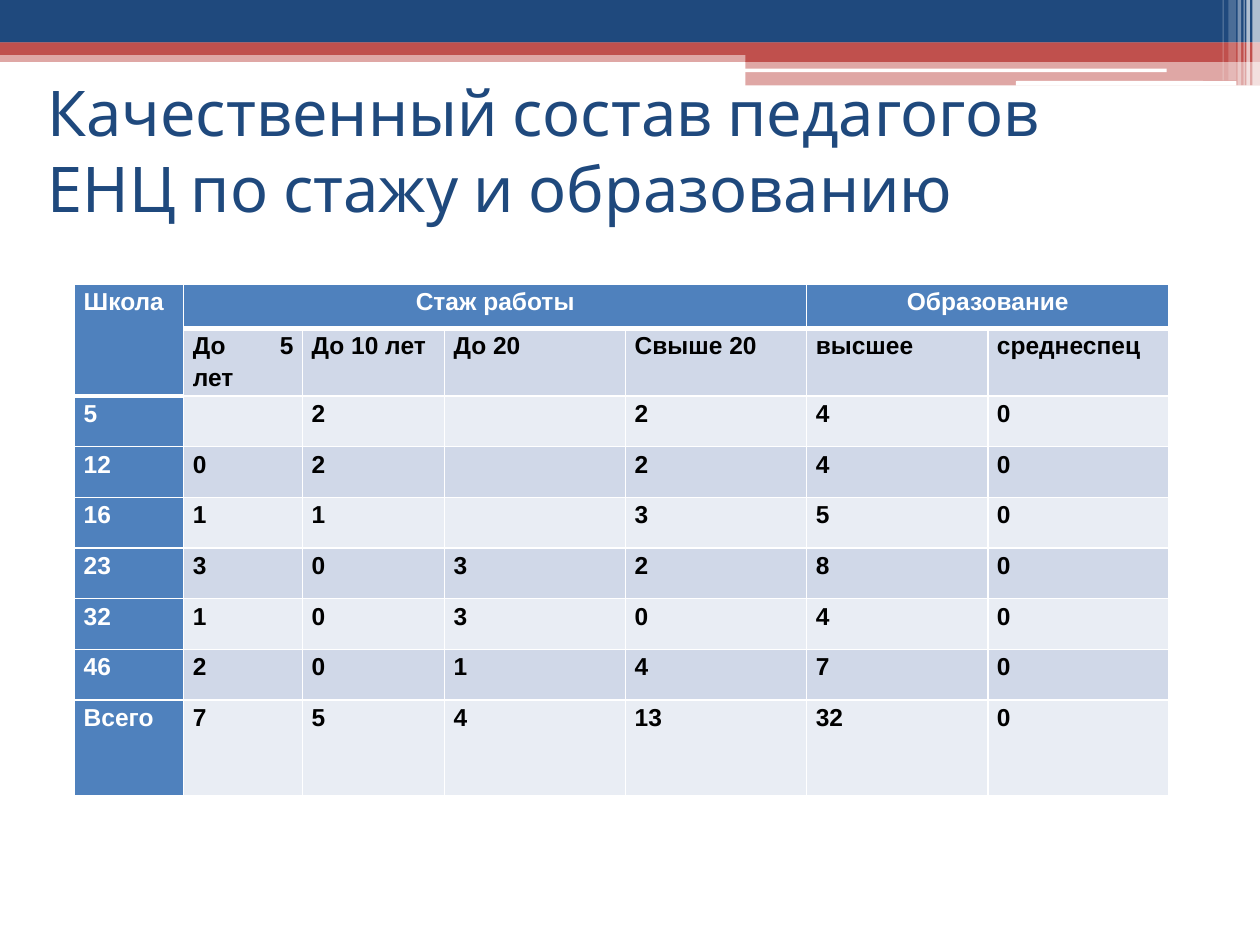
"""Builds the slide on teaching staff by experience and education."""
from dataclasses import dataclass

from lxml import etree
from pptx import Presentation
from pptx.dml.color import RGBColor
from pptx.enum.shapes import MSO_SHAPE
from pptx.enum.text import MSO_ANCHOR, PP_ALIGN
from pptx.oxml.ns import qn
from pptx.util import Pt

RECT, ROUND = MSO_SHAPE.RECTANGLE, MSO_SHAPE.ROUNDED_RECTANGLE
LEFT, CENTER, JUSTIFY = PP_ALIGN.LEFT, PP_ALIGN.CENTER, PP_ALIGN.JUSTIFY
MIDDLE = MSO_ANCHOR.MIDDLE


@dataclass(frozen=True)
class Theme:
    navy: str = "1F497D"
    red: str = "C0504D"
    white: str = "FFFFFF"
    black: str = "000000"
    head: str = "4F81BD"
    bands: tuple = ("E9EDF4", "D0D8E8")
    title_font: str = "Karla"
    body_font: str = "Arial"
    title_size: int = 36
    body_size: int = 14
    thin: int = 1
    thick: int = 3


def write(tf, text, *, font, size, color, bold=False, align=LEFT, spacing=1.0):
    p = tf.paragraphs[0]
    p.alignment, p.line_spacing = align, spacing
    r = p.add_run()
    r.text = text
    r.font.name, r.font.size, r.font.bold = font, Pt(size), bold
    r.font.color.rgb = RGBColor.from_string(color)


class Deck:
    def __init__(self, theme, width, height):
        self.theme = theme
        self.prs = Presentation()
        self.prs.slide_width, self.prs.slide_height = Pt(width), Pt(height)
        self.s = self.prs.slides.add_slide(self.prs.slide_layouts[6])

    def bar(self, x, y, w, h, color, alpha=100, kind=RECT):
        sp = self.s.shapes.add_shape(kind, Pt(x), Pt(y), Pt(w), Pt(h))
        sp.shadow.inherit = False
        sp.line.fill.background()
        sp.fill.solid()
        sp.fill.fore_color.rgb = RGBColor.from_string(color)
        if alpha < 100:
            clr = sp.fill._xPr.find(qn("a:solidFill"))[0]
            etree.SubElement(clr, qn("a:alpha"), val=str(alpha * 1000))

    def title(self, x, y, w, h, text):
        t = self.theme
        tf = self.s.shapes.add_textbox(Pt(x), Pt(y), Pt(w), Pt(h)).text_frame
        tf.word_wrap, tf.vertical_anchor = True, MIDDLE
        write(tf, text, font=t.title_font, size=t.title_size, color=t.navy)

    def cell(self, cell, text, fill, color, align, borders):
        t = self.theme
        cell.margin_left = cell.margin_right = Pt(5.2)
        cell.margin_top = cell.margin_bottom = 0
        if text:
            write(cell.text_frame, text, font=t.body_font, size=t.body_size,
                  color=color, bold=True, align=align, spacing=1.15)
        tc_pr = cell._tc.get_or_add_tcPr()
        for side, width in borders.items():
            ln = etree.SubElement(tc_pr, qn("a:ln" + side), w=str(Pt(width)))
            solid = etree.SubElement(ln, qn("a:solidFill"))
            etree.SubElement(solid, qn("a:srgbClr"), val=t.white)
        cell.fill.solid()
        cell.fill.fore_color.rgb = RGBColor.from_string(fill)

    def table(self, x, y, widths, heights, rows, merges, justified):
        t = self.theme
        frame = self.s.shapes.add_table(len(rows), len(widths), Pt(x), Pt(y),
                                        Pt(sum(widths)), Pt(sum(heights)))
        table = frame.table
        for column, width in zip(table.columns, widths):
            column.width = Pt(width)
        for row, height in zip(table.rows, heights):
            row.height = Pt(height)
        for top, left, bottom, right in merges:
            table.cell(top, left).merge(table.cell(bottom, right))
        under_head = {(0, c) for c in range(len(widths))} | {(1, 0)}
        for i, row in enumerate(rows):
            for j, text in enumerate(row):
                is_head = i == 0 or j == 0
                align = JUSTIFY if j == 0 or (i, j) in justified else LEFT
                borders = dict(L=t.thin, R=t.thin,
                               T=t.thick if (i - 1, j) in under_head else t.thin,
                               B=t.thick if (i, j) in under_head else t.thin)
                self.cell(table.cell(i, j), text,
                          t.head if is_head else t.bands[i % 2],
                          t.white if is_head else t.black,
                          CENTER if i == 0 and j else align, borders)


def main():
    t = Theme()
    deck = Deck(t, 720, 540)

    deck.bar(0, 28.8, 720, 6.6, t.red, 50)
    deck.bar(0, 0, 720, 24.4, t.navy)
    deck.bar(0, 24.2, 720, 7.2, t.red)
    deck.bar(426, 28.3, 294, 7.1, t.red)
    deck.bar(426, 35, 294, 13.9, t.red, 50)
    deck.bar(425.5, 39.2, 241.2, 2.1, t.white, kind=ROUND)
    deck.bar(580.5, 46.3, 126, 2.7, t.white, kind=ROUND)
    for x, w, h, alpha in ((715.7, 4.3, 49, 65), (712.2, 2, 49, 65),
                           (710.6, 0.7, 49, 60), (707.2, 2, 49, 40),
                           (702, 4.3, 46, 20), (698.6, 0.7, 46, 30)):
        deck.bar(x, 0, w, h, t.white, alpha)

    deck.title(20.2, 43.2, 648, 84.2,
               "Качественный состав педагогов ЕНЦ по стажу и образованию")

    rows = [
        ("Школа", "Стаж работы", "", "", "", "Образование", ""),
        ("", "До 5 лет", "До 10 лет", "До 20", "Свыше 20", "высшее", "среднеспец"),
        ("5", "", "2", "", "2", "4", "0"),
        ("12", "0", "2", "", "2", "4", "0"),
        ("16", "1", "1", "", "3", "5", "0"),
        ("23", "3", "0", "3", "2", "8", "0"),
        ("32", "1", "0", "3", "0", "4", "0"),
        ("46", "2", "0", "1", "4", "7", "0"),
        ("Всего", "7", "5", "4", "13", "32", "0"),
    ]
    justified = {(1, c) for c in (1, 4, 5, 6)} | {(8, c) for c in range(1, 7)}
    deck.table(42.6, 162.4, [62.4, 67.9, 81.1] + [103.5] * 4,
               [25.3, 36.5] + [28.95] * 6 + [54.7], rows,
               [(0, 0, 1, 0), (0, 1, 0, 4), (0, 5, 0, 6)], justified)

    deck.prs.save("out.pptx")


if __name__ == "__main__":
    main()
